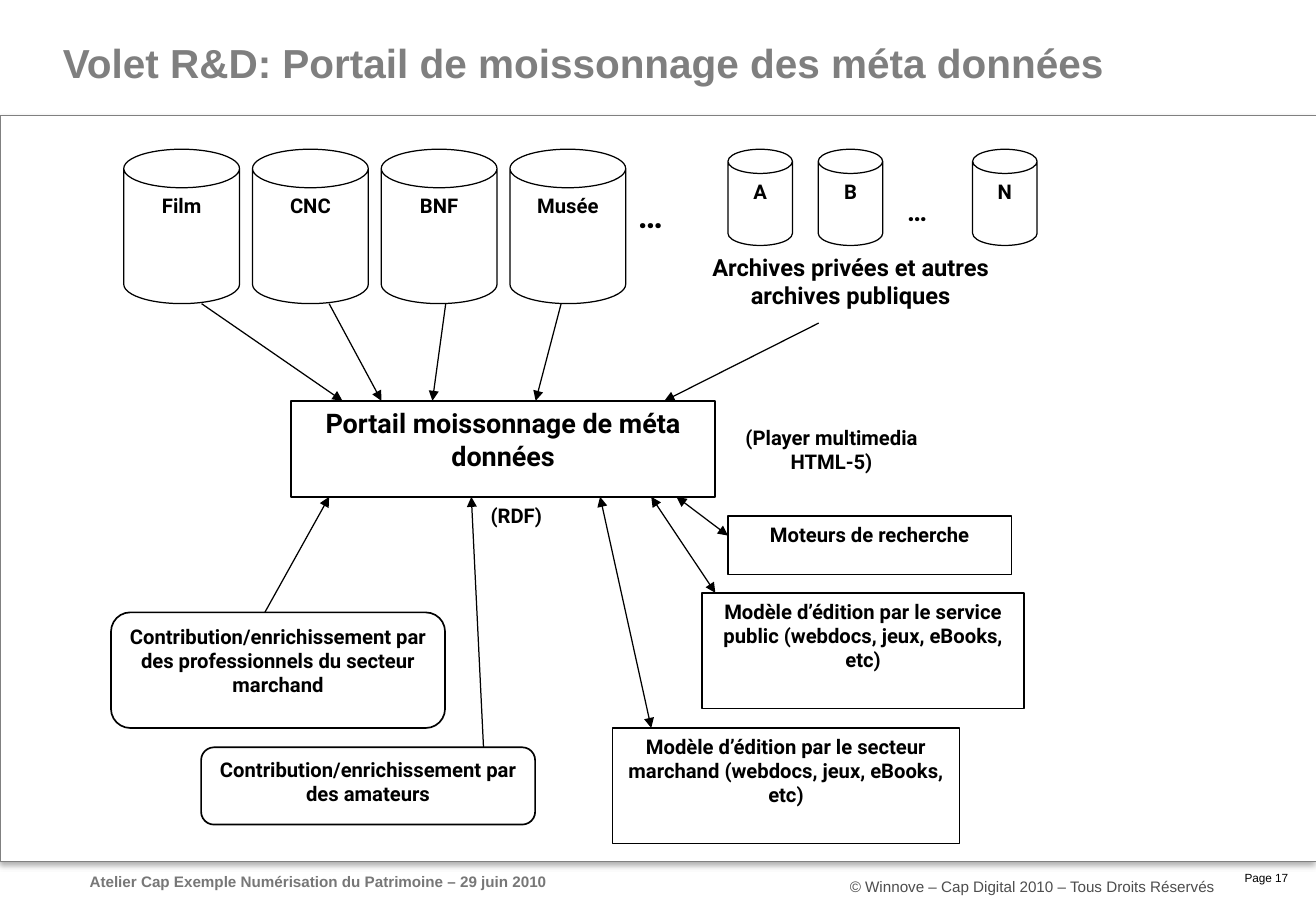
"""Builds the slide on the metadata harvesting portal."""
from lxml.etree import SubElement
from pptx import Presentation
from pptx.dml.color import RGBColor
from pptx.enum.shapes import MSO_CONNECTOR as Connector, MSO_SHAPE as Shape
from pptx.enum.text import MSO_ANCHOR as Anchor, PP_ALIGN as Align
from pptx.oxml.ns import qn
from pptx.util import Pt

BLACK = RGBColor(0x00, 0x00, 0x00)
WHITE = RGBColor(0xFF, 0xFF, 0xFF)
FRAME_GREY = RGBColor(0x80, 0x80, 0x80)
TITLE_GREY = RGBColor(0x7F, 0x7F, 0x7F)
EVENT_GREY = RGBColor(0x77, 0x77, 0x77)
RIGHTS_GREY = RGBColor(0x4D, 0x4D, 0x4D)

CAN_TOP = 88.5
PORTAL_TOP, PORTAL_BOTTOM = 237.6, 294.5


def write(shape, text, size, align=Align.CENTER, font="Roboto", color=BLACK, bold=True):
    """Put formatted text into a shape and return its frame."""
    frame = shape.text_frame
    frame.word_wrap = True
    frame.vertical_anchor = Anchor.TOP
    frame.text = text
    for para in frame.paragraphs:
        para.alignment = align
        for span in para.runs:
            span.font.name = font
            span.font.size = Pt(size)
            span.font.bold = bold
            span.font.color.rgb = color
    return frame


def add_label(page, area, text, size, **style):
    """Add a text box and return its frame."""
    box = page.shapes.add_textbox(*map(Pt, area))
    return write(box, text, size, **style)


def add_block(page, kind, area, line_width=1.0, line_color=BLACK):
    """Add a white outlined shape; a zero line width means no outline."""
    shape = page.shapes.add_shape(kind, *map(Pt, area))
    shape.shadow.inherit = False
    shape.fill.solid()
    shape.fill.fore_color.rgb = WHITE
    if line_width:
        shape.line.color.rgb = line_color
        shape.line.width = Pt(line_width)
    else:
        shape.line.fill.background()
    return shape


def add_can(page, left, width, height, curve, text):
    """Add a labelled database cylinder."""
    can = add_block(page, Shape.CAN, (left, CAN_TOP, width, height), 0.75)
    can.adjustments[0] = curve
    write(can, text, 12)


def add_arrow(page, start, end, both=False):
    """Add an arrow between two points, with a second head if asked."""
    points = map(Pt, (*start, *end))
    arrow = page.shapes.add_connector(Connector.STRAIGHT, *points)
    arrow.line.color.rgb = BLACK
    arrow.line.width = Pt(0.75)
    line = arrow.line._get_or_add_ln()
    for tag in ("a:headEnd", "a:tailEnd") if both else ("a:tailEnd",):
        SubElement(line, qn(tag), type="triangle")
    SubElement(arrow._element.spPr, qn("a:effectLst"))


def add_frame(page):
    """Add the bordered content area with its soft shadow."""
    frame = add_block(page, Shape.RECTANGLE, (0, 68.4, 780, 442), 0.5, FRAME_GREY)
    effects = frame._element.spPr.find(qn("a:effectLst"))
    shadow = SubElement(effects, qn("a:outerShdw"), blurRad=str(Pt(3.5)),
                        dist=str(Pt(2.2)), dir="5400000", rotWithShape="0")
    tone = SubElement(shadow, qn("a:srgbClr"), val=str(BLACK))
    SubElement(tone, qn("a:alpha"), val="32000")


def add_title_and_footer(page):
    """Add the title, event, copyright and page number."""
    title = add_label(page, (30.2, 18, 731.5, 33.1),
                      "Volet R&D: Portail de moissonnage des méta données",
                      24, align=Align.LEFT, font="Arial", color=TITLE_GREY)
    title.vertical_anchor = Anchor.BOTTOM
    title.margin_top, title.margin_bottom = Pt(2.9), Pt(0)
    number = add_label(page, (727.2, 516.2, 46.8, 8.6), "Page 17", 7,
                       font="Arial", bold=False)
    number.word_wrap = False
    number.margin_left = number.margin_right = Pt(0)
    number.margin_top = number.margin_bottom = Pt(0)
    event = add_label(page, (46, 514.8, 320.4, 16.6),
                      "Atelier Cap Exemple Numérisation du Patrimoine – 29 juin 2010",
                      9, align=Align.LEFT, font="Arial", color=EVENT_GREY)
    event.paragraphs[0].line_spacing = 0.9
    rights = add_label(page, (470.2, 513.4, 283, 20.9),
                       "© Winnove – Cap Digital 2010 – Tous Droits Réservés",
                       9, font="Arial", color=RIGHTS_GREY, bold=False)
    rights.vertical_anchor = Anchor.BOTTOM


def add_archives(page):
    """Add the public and private archive sources."""
    for index, name in enumerate(("Film", "CNC", "BNF", "Musée")):
        add_can(page, 73.4 + 76.3 * index, 68.6, 91.5, 0.333, name)
    for left, name in ((431.5, "A"), (485, "B"), (576.5, "N")):
        add_can(page, left, 38.2, 57, 0.375, name)
    others = add_block(page, Shape.RECTANGLE, (393.8, 146.2, 221, 46), 0)
    write(others, "Archives privées et autres archives publiques", 14)
    add_label(page, (371, 111.6, 53.3, 46), "…", 20, align=Align.LEFT)
    add_label(page, (530.6, 111.6, 38.2, 34.6), "…", 16, align=Align.LEFT)


def add_portal_and_users(page):
    """Add the portal, its notes, contributors and publishers."""
    blocks = (
        (Shape.RECTANGLE, (172.5, PORTAL_TOP, 251.5, PORTAL_BOTTOM - PORTAL_TOP), 16,
         "Portail moissonnage de méta données"),
        (Shape.RECTANGLE, (431.5, 306, 168, 34.5), 12, "Moteurs de recherche"),
        (Shape.ROUNDED_RECTANGLE, (65.8, 363, 198, 68.5), 12,
         "Contribution/enrichissement par des professionnels du secteur marchand"),
        (Shape.ROUNDED_RECTANGLE, (119.2, 443, 198, 45.8), 12,
         "Contribution/enrichissement par des amateurs"),
        (Shape.RECTANGLE, (416.2, 351.4, 190.8, 68.5), 12,
         "Modèle d’édition par le service public (webdocs, jeux, eBooks, etc)"),
        (Shape.RECTANGLE, (363, 431.5, 205.8, 68.5), 12,
         "Modèle d’édition par le secteur marchand (webdocs, jeux, eBooks, etc)"),
    )
    for kind, area, size, text in blocks:
        write(add_block(page, kind, area), text, size)
    add_label(page, (409, 248.4, 167.8, 46), "(Player multimedia\nHTML-5)", 12)
    add_label(page, (256.3, PORTAL_BOTTOM, 99.4, 23), "(RDF)", 12)


def add_flows(page):
    """Add the arrows into and out of the portal."""
    can_bottom = 180
    for start, end in ((119.5, 203), (195.1, 226.1), (264.2, 256.3), (332.6, 317.5)):
        add_arrow(page, (start, can_bottom), (end, PORTAL_TOP))
    add_arrow(page, (485.3, 191.5), (393.8, PORTAL_TOP))
    for start, end in (((157, 363), 195.1), ((286.6, 443), 279.4)):
        add_arrow(page, start, (end, PORTAL_BOTTOM))
    for start, end in (((431.5, 317.5), 401), ((424, 351.4), 386), ((386, 431.5), 355.7)):
        add_arrow(page, start, (end, PORTAL_BOTTOM), both=True)


def main():
    """Build and save the deck."""
    deck = Presentation()
    deck.slide_width, deck.slide_height = Pt(780), Pt(540)
    page = deck.slides.add_slide(deck.slide_layouts[6])
    add_frame(page)
    add_title_and_footer(page)
    add_archives(page)
    add_portal_and_users(page)
    add_flows(page)
    deck.save("out.pptx")


if __name__ == "__main__":
    main()
